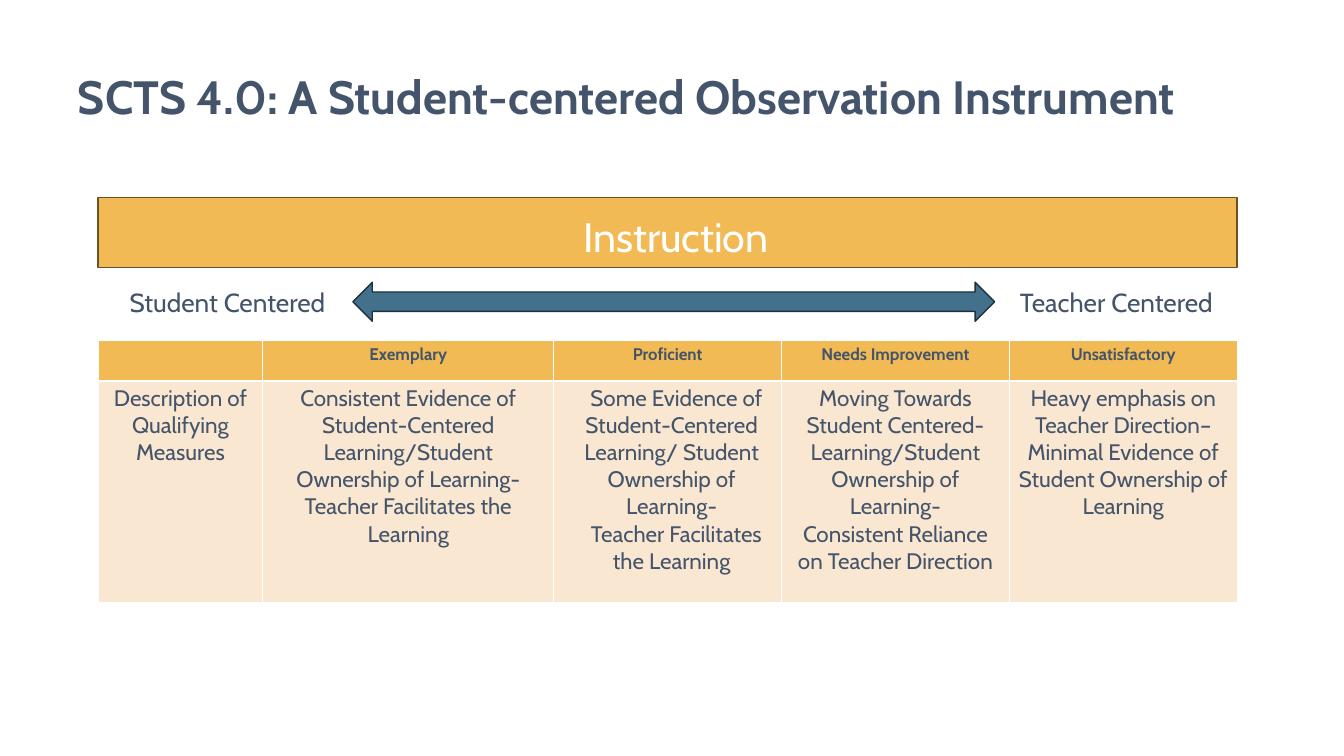
"""Builds the slide that compares student-centered and teacher-centered instruction."""
from dataclasses import dataclass

from lxml import etree
from pptx import Presentation
from pptx import util as u
from pptx.dml.color import RGBColor
from pptx.enum import shapes, text
from pptx.oxml import ns


@dataclass(frozen=True)
class Theme:
    """Colours, font and type sizes of the deck."""
    face: str = "Cabin"
    ink: str = "44546A"
    paper: str = "FFFFFF"
    gold: str = "F1BA55"
    gold_edge: str = "6A5225"
    blue: str = "43718B"
    blue_edge: str = "1D323D"
    cream: str = "FAE7D1"
    title: int = 50
    banner: int = 44
    label: int = 28
    body: int = 24
    head: int = 18


class Slide:
    """Draws styled elements on a grid of 20 columns by 11.25 rows."""

    def __init__(self, deck, theme):
        """Opens a title-only slide."""
        self.theme = theme
        self.column = deck.slide_width / 20
        self.row = deck.slide_height / 11.25
        self.page = deck.slides.add_slide(deck.slide_layouts[5])

    def place(self, left, top, width, height):
        """Turns grid units into slide lengths."""
        return (u.Emu(round(left * self.column)), u.Emu(round(top * self.row)),
                u.Emu(round(width * self.column)), u.Emu(round(height * self.row)))

    def typeset(self, frame, wording, size, color, bold=False, align=text.PP_ALIGN.LEFT, indent=None):
        """Fills a text frame, one paragraph a line."""
        frame.text = wording
        for paragraph in frame.paragraphs:
            paragraph.alignment = align
            if indent:
                for name, inches in indent.items():
                    paragraph._p.get_or_add_pPr().set(name, str(u.Inches(inches)))
            style = {"name": self.theme.face, "size": u.Pt(size), "bold": bold}
            for run in paragraph.runs:
                for name, value in style.items():
                    setattr(run.font, name, value)
                run.font.color.rgb = RGBColor.from_string(color)

    def title(self, wording, box):
        """Moves and fills the title placeholder."""
        heading = self.page.shapes.title
        for name, value in zip(("left", "top", "width", "height"), self.place(*box)):
            setattr(heading, name, value)
        frame = heading.text_frame
        self.typeset(frame, wording, self.theme.title, self.theme.ink, bold=True)
        options = {"vertical_anchor": text.MSO_ANCHOR.TOP, "auto_size": text.MSO_AUTO_SIZE.NONE}
        for name, value in options.items():
            setattr(frame, name, value)

    def label(self, wording, box, size, color):
        """Adds a wrapped text box."""
        frame = self.page.shapes.add_textbox(*self.place(*box)).text_frame
        frame.word_wrap = True
        self.typeset(frame, wording, size, color)

    def block(self, kind, box, fill, edge):
        """Adds an outlined preset shape."""
        block = self.page.shapes.add_shape(kind, *self.place(*box))
        block.shadow.inherit = False
        block.fill.solid()
        block.fill.fore_color.rgb = RGBColor.from_string(fill)
        block.line.color.rgb = RGBColor.from_string(edge)
        block.line.width = u.Pt(1.5)

    def border(self, cell, widths):
        """Draws the cell's borders, given points by side."""
        properties = cell._tc.get_or_add_tcPr()
        for side, width in widths.items():
            line = etree.SubElement(properties, ns.qn(f"a:ln{side}"), w=str(u.Pt(width)))
            solid = etree.SubElement(line, ns.qn("a:solidFill"))
            etree.SubElement(solid, ns.qn("a:srgbClr"), val=self.theme.paper)

    def table(self, grid, corner, widths, heights, indents):
        """Adds a table with a bold head row and a thick rule below it."""
        box = (*corner, sum(widths), sum(heights))
        table = self.page.shapes.add_table(len(grid), len(widths), *self.place(*box)).table
        table.horz_banding = False
        for column, width in zip(table.columns, widths):
            column.width = u.Emu(round(width * self.column))
        for row, height in zip(table.rows, heights):
            row.height = u.Emu(round(height * self.row))
        looks = [(self.theme.gold, self.theme.head, {"L": 1, "R": 1, "T": 1, "B": 3}),
                 (self.theme.cream, self.theme.body, {"L": 1, "R": 1, "T": 3, "B": 1})]
        for r, (wordings, (fill, size, edges)) in enumerate(zip(grid, looks)):
            for c, wording in enumerate(wordings):
                cell = table.cell(r, c)
                self.border(cell, edges)
                cell.fill.solid()
                cell.fill.fore_color.rgb = RGBColor.from_string(fill)
                self.typeset(cell.text_frame, wording, size, self.theme.ink, bold=r == 0,
                             align=text.PP_ALIGN.CENTER, indent=indents.get((r, c)))


LEVELS = {
    "": "Description of Qualifying Measures",
    "Exemplary": "Consistent Evidence of Student-Centered Learning/Student Ownership of Learning-\n"
                 "Teacher Facilitates the Learning",
    "Proficient": "Some Evidence of Student-Centered Learning/ Student Ownership of Learning-\n"
                  "Teacher Facilitates the Learning",
    "Needs Improvement": "Moving Towards Student Centered- Learning/Student Ownership of Learning-\n"
                         "Consistent Reliance on Teacher Direction",
    "Unsatisfactory": "Heavy emphasis on Teacher Direction– Minimal Evidence of "
                      "Student Ownership of Learning",
}


def main():
    """Builds and saves the deck."""
    deck = Presentation()
    deck.slide_width, deck.slide_height = u.Inches(20), u.Inches(11.25)
    theme = Theme()
    slide = Slide(deck, theme)
    kinds = shapes.MSO_SHAPE

    slide.title("SCTS 4.0: A Student-centered Observation Instrument", (1.06, 0.96, 17.94, 1.2))
    slide.block(kinds.RECTANGLE, (1.46, 2.94, 16.95, 1.04), theme.gold, theme.gold_edge)
    slide.label("Instruction", (8.58, 3.09, 3.33, 0.67), theme.banner, theme.paper)
    slide.label("Student Centered", (1.83, 4.21, 5.08, 0.5), theme.label, theme.ink)
    slide.block(kinds.LEFT_RIGHT_ARROW, (5.25, 4.2, 9.55, 0.58), theme.blue, theme.blue_edge)
    slide.label("Teacher Centered", (15.08, 4.21, 3.7, 0.57), theme.label, theme.ink)
    slide.table([list(LEVELS), list(LEVELS.values())], (1.46, 5.07),
                [2.45, 4.33] + [3.39] * 3, [0.6, 3.3],
                {(1, 2): {"marL": 0.12, "indent": 0.14}})
    deck.save("out.pptx")


if __name__ == "__main__":
    main()
